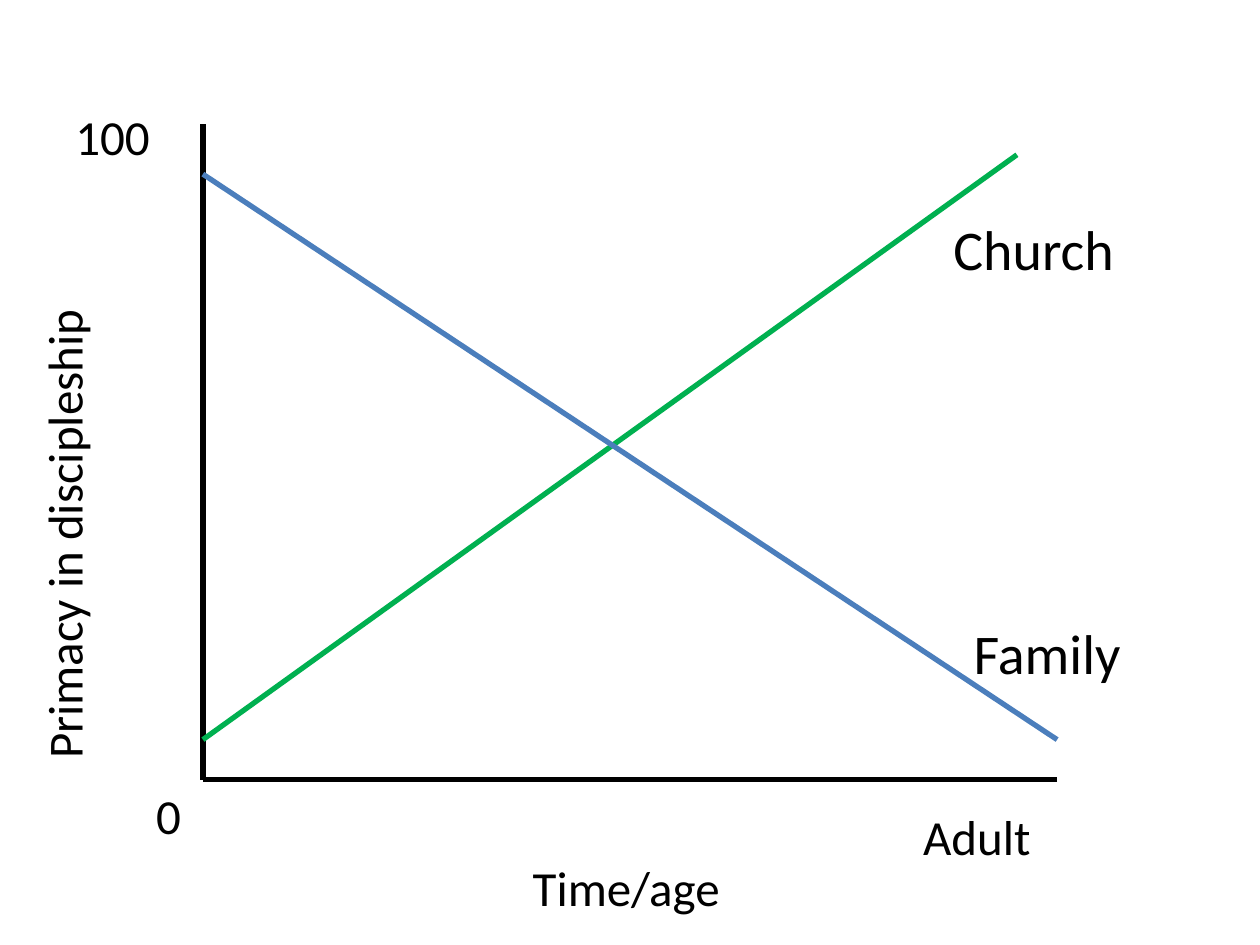
from lxml import etree
from pptx import Presentation
from pptx.dml.color import RGBColor
from pptx.enum.shapes import MSO_CONNECTOR
from pptx.enum.text import MSO_AUTO_SIZE
from pptx.oxml.ns import qn
from pptx.util import Cm, Pt

STRAIGHT = MSO_CONNECTOR.STRAIGHT
GROW = MSO_AUTO_SIZE.SHAPE_TO_FIT_TEXT
COLORS = {"black": "000000", "green": "00B050", "blue": "4B7EBC"}
FONT = "Calibri"

LEFT, RIGHT, TOP, BASE = 4.09, 21.31, 2.51, 15.72
LOW = 14.91

LINES = [
    ((LEFT, TOP), (LEFT, BASE), "black"),
    ((RIGHT, BASE), (LEFT, BASE), "black"),
    ((LEFT, LOW), (20.5, 3.12), "green"),
    ((LEFT, 3.51), (RIGHT, LOW), "blue"),
]

HEIGHTS = {32: 1.62, 28: 1.45}
LABELS = [
    ("Church", 18.97, 4.19, 4.39, 32, 0),
    ("Family", 19.38, 12.34, 3.99, 32, 0),
    ("Time/age", 10.49, 17.17, 5.59, 28, 0),
    ("Primacy in discipleship", -4.32, 9.22, 11.2, 28, 270),
    ("0", 2.9, BASE, 1.19, 28, 0),
    ("100", 1.27, 2.03, 2.59, 28, 0),
    ("Adult", 18.36, 16.13, 3.0, 28, 0),
]


def add_line(slide, start, end, color):
    ends = [Cm(n) for n in (*start, *end)]
    line = slide.shapes.add_connector(STRAIGHT, *ends)
    line.line.color.rgb = RGBColor.from_string(COLORS[color])
    line.line.width = Pt(3)
    etree.SubElement(line._element.spPr, qn("a:effectLst"))


def add_label(slide, text, left, top, width, size, turn):
    box = slide.shapes.add_textbox(Cm(left), Cm(top), Cm(width), Cm(HEIGHTS[size]))
    box.rotation = turn
    frame = box.text_frame
    frame.text = text
    frame.word_wrap = True
    frame.auto_size = GROW
    font = frame.paragraphs[0].runs[0].font
    font.name = FONT
    font.size = Pt(size)
    font.color.rgb = RGBColor.from_string(COLORS["black"])


def main():
    deck = Presentation()
    deck.slide_width, deck.slide_height = Cm(25.4), Cm(19.05)
    slide = deck.slides.add_slide(deck.slide_layouts[6])
    for line in LINES:
        add_line(slide, *line)
    for label in LABELS:
        add_label(slide, *label)
    deck.save("out.pptx")


if __name__ == "__main__":
    main()
